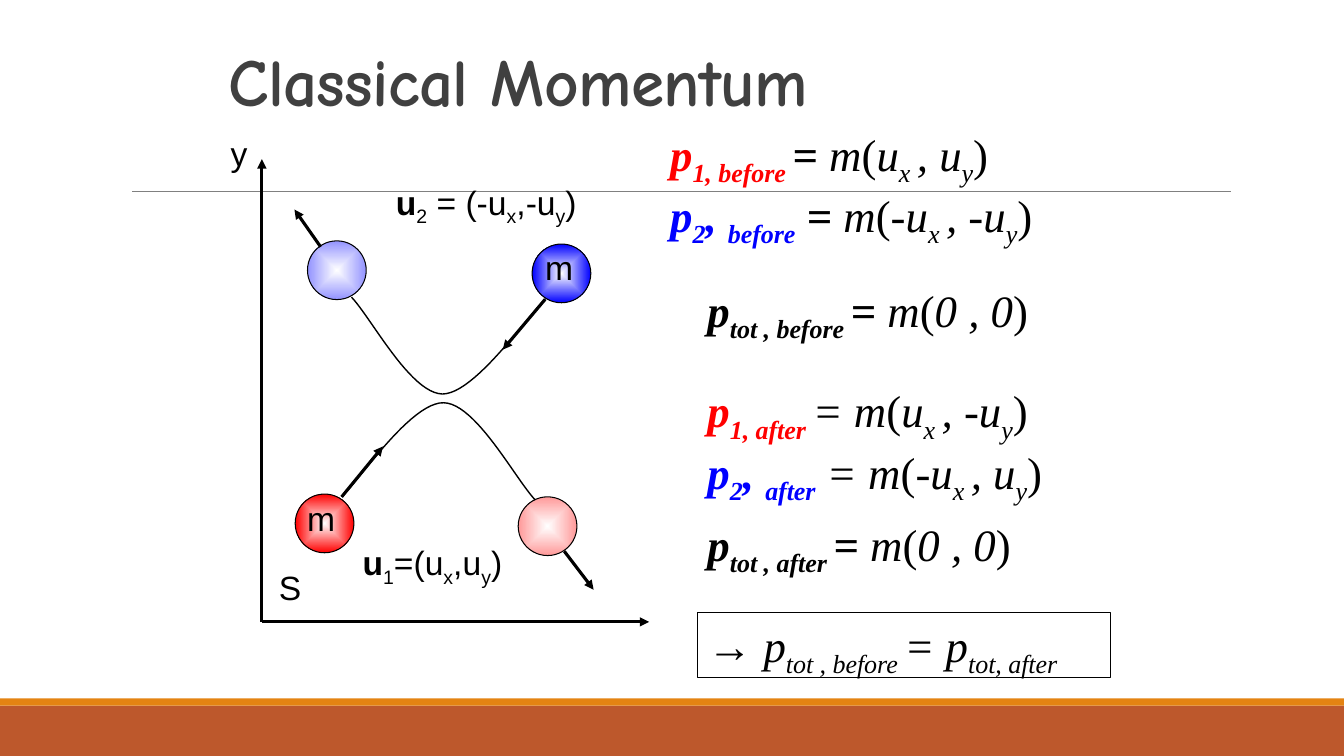
from dataclasses import dataclass

from lxml import etree
from pptx import Presentation
from pptx.dml.color import RGBColor
from pptx.enum.shapes import MSO_CONNECTOR, MSO_SHAPE
from pptx.enum.text import MSO_ANCHOR, MSO_AUTO_SIZE, PP_ALIGN
from pptx.oxml.ns import qn
from pptx.util import Cm, Pt

RECTANGLE, OVAL = MSO_SHAPE.RECTANGLE, MSO_SHAPE.OVAL
STRAIGHT = MSO_CONNECTOR.STRAIGHT
TOP, BOTTOM = MSO_ANCHOR.TOP, MSO_ANCHOR.BOTTOM
LEFT = PP_ALIGN.LEFT
GROW, NO_FIT = MSO_AUTO_SIZE.SHAPE_TO_FIT_TEXT, MSO_AUTO_SIZE.NONE

BLACK = RGBColor(0, 0, 0)
WHITE = RGBColor(0xFF, 0xFF, 0xFF)
RED = RGBColor(0xFF, 0, 0)
PINK = RGBColor(0xFF, 0x99, 0x99)
BLUE = RGBColor(0, 0, 0xFF)
PALE_BLUE = RGBColor(0x93, 0x93, 0xFF)
GRAY = RGBColor(0x80, 0x80, 0x80)
TITLE_GRAY = RGBColor(0x40, 0x40, 0x40)
RUST = RGBColor(0xBD, 0x58, 0x2C)
ORANGE = RGBColor(0xE4, 0x83, 0x12)

BALL_SIZE = 1.48
CURVE_STEPS = 24
LABEL = {"name": "Arial", "size": Pt(24)}
FORMULA = {"name": "Times New Roman", "size": Pt(32)}
Point = tuple[float, float]


@dataclass
class Span:
    text: str
    bold: bool = False
    italic: bool = False
    sub: bool = False
    color: RGBColor = BLACK


@dataclass
class Ball:
    left: float
    top: float
    color: RGBColor


@dataclass
class Arrow:
    start: Point
    end: Point


@dataclass
class Note:
    left: float
    top: float
    width: float
    height: float
    font: dict
    lines: list[list[Span]]
    framed: bool = False


def velocity(index: str, equals: str, minus: str) -> list[Span]:
    return [Span("u", bold=True), Span(index, sub=True), Span(f"{equals}({minus}u"),
            Span("x", sub=True), Span(f",{minus}u"), Span("y", sub=True), Span(")")]


def product(x: str, y: str) -> list[Span]:
    """The part m(x , y) with subscripts on both components."""
    return [Span("m", italic=True), Span("("), Span(x, italic=True),
            Span("x ", italic=True, sub=True), Span(f", {y}", italic=True),
            Span("y", italic=True, sub=True), Span(")")]


def momenta(when: str, bold: bool, y1: str, y2: str) -> list[list[Span]]:
    """Momentum of both particles, one line each."""
    first = [Span("p", True, True, color=RED), Span(f"1, {when} ", True, True, True, RED),
             Span("= ", bold, True)]
    second = [Span("p", True, True, color=BLUE), Span("2", True, True, True, BLUE),
              Span(", ", True, True, color=BLUE), Span(when, True, True, True, BLUE),
              Span(" = ", bold, True)]
    return [first + product("u", y1), second + product("-u", y2)]


def total(when: str) -> list[list[Span]]:
    return [[Span("p", True, True), Span(f"tot , {when} ", True, True, True),
             Span("= ", True, True), Span("m", italic=True), Span("("),
             Span("0 , 0", italic=True), Span(")")]]


BALLS = [Ball(7.44, 12.45, RED), Ball(13.06, 12.52, PINK),
         Ball(13.41, 6.15, BLUE), Ball(7.75, 6.07, PALE_BLUE)]
ARROWS = [Arrow((8.61, 12.52), (9.65, 11.25)), Arrow((14.22, 13.89), (14.96, 14.86)),
          Arrow((13.74, 7.54), (12.67, 8.81)), Arrow((8.08, 6.22), (7.42, 5.28)),
          Arrow((6.6, 15.67), (16.36, 15.67)), Arrow((6.6, 15.67), (6.6, 4.01))]
# Each path: a start point, then three control points per Bezier piece
PATHS = [
    [(8.61, 12.52), (9.02, 12.14), (10.36, 10.13), (11.18, 10.15),
     (11.99, 10.16), (13.0, 12.09), (13.49, 12.6)],
    [(13.74, 7.54), (13.31, 7.95), (11.96, 9.93), (11.15, 9.93),
     (10.34, 9.91), (9.35, 8.0), (8.86, 7.49)],
]
NOTES = [
    Note(5.56, 3.23, 0.94, 1.27, LABEL, [[Span("y")]]),
    Note(8.89, 13.54, 4.19, 1.27, LABEL, [velocity("1", "=", "")]),
    Note(9.73, 4.45, 5.23, 1.27, LABEL, [velocity("2", " = ", "-")]),
    Note(7.49, 12.42, 1.22, 1.27, LABEL, [[Span("m")]]),
    Note(13.49, 6.1, 1.22, 1.27, LABEL, [[Span("m")]]),
    Note(6.78, 14.17, 1.09, 1.27, LABEL, [[Span("S")]]),
    Note(16.64, 3.07, 10.16, 3, FORMULA, momenta("before", True, "u", "-u")),
    Note(17.58, 9.53, 9.37, 3, FORMULA, momenta("after", False, "-u", "u")),
    Note(17.58, 6.99, 9.04, 1.63, FORMULA, total("before")),
    Note(17.58, 12.9, 8.53, 1.63, FORMULA, total("after")),
    Note(17.58, 15.44, 10.41, 1.63, FORMULA, [[
        Span("→ "), Span("p", italic=True), Span("tot , before ", italic=True, sub=True),
        Span("= p", italic=True), Span("tot, after", italic=True, sub=True)]], framed=True),
]


def apply(target, values: dict) -> None:
    for name, value in values.items():
        setattr(target, name, value)


def outline(shape, color: RGBColor, width: float) -> None:
    shape.line.color.rgb = color
    shape.line.width = Pt(width)


def add_bar(page, top: float, height: float, color: RGBColor) -> None:
    bar = page.shapes.add_shape(RECTANGLE, 0, Cm(top), Cm(33.87), Cm(height))
    bar.shadow.inherit = False
    bar.fill.solid()
    bar.fill.fore_color.rgb = color
    bar.line.fill.background()


def add_line(page, start: Point, end: Point, color: RGBColor, width: float,
             arrowhead: bool = False) -> None:
    line = page.shapes.add_connector(STRAIGHT, *(Cm(value) for value in start + end))
    outline(line, color, width)
    properties = line.element.spPr
    if arrowhead:
        etree.SubElement(properties.find(qn("a:ln")), qn("a:tailEnd"), type="triangle")
    etree.SubElement(properties, qn("a:effectLst"))


def add_ball(page, ball: Ball) -> None:
    shape = page.shapes.add_shape(OVAL, Cm(ball.left), Cm(ball.top), Cm(BALL_SIZE), Cm(BALL_SIZE))
    shape.shadow.inherit = False
    outline(shape, BLACK, 0.75)
    shape.fill.gradient()
    for stop, color in zip(shape.fill.gradient_stops, (WHITE, ball.color)):
        stop.color.rgb = color
    # Radiate from the centre
    gradient = shape.element.spPr.find(qn("a:gradFill"))
    gradient.remove(gradient.find(qn("a:lin")))
    radial = etree.SubElement(gradient, qn("a:path"), path="shape")
    etree.SubElement(radial, qn("a:fillToRect"), dict.fromkeys("ltrb", "50000"))


def add_curve(page, points: list[Point]) -> None:
    vertices = []
    for first in range(0, len(points) - 1, 3):
        controls = points[first:first + 4]
        for step in range(1, CURVE_STEPS + 1):
            t = step / CURVE_STEPS
            weights = ((1 - t) ** 3, 3 * t * (1 - t) ** 2, 3 * t ** 2 * (1 - t), t ** 3)
            vertices.append(tuple(Cm(sum(w * point[axis] for w, point in zip(weights, controls)))
                                  for axis in (0, 1)))
    builder = page.shapes.build_freeform(Cm(points[0][0]), Cm(points[0][1]))
    builder.add_line_segments(vertices, close=False)
    curve = builder.convert_to_shape()
    curve.shadow.inherit = False
    curve.fill.background()
    outline(curve, BLACK, 1)


def add_note(page, note: Note) -> None:
    place = [Cm(value) for value in (note.left, note.top, note.width, note.height)]
    if note.framed:
        box = page.shapes.add_shape(RECTANGLE, *place)
        box.shadow.inherit = False
        box.fill.background()
        outline(box, BLACK, 0.75)
    else:
        box = page.shapes.add_textbox(*place)
    frame = box.text_frame
    apply(frame, {"word_wrap": False, "auto_size": GROW, "vertical_anchor": TOP})
    for number, line in enumerate(note.lines):
        para = frame.add_paragraph() if number else frame.paragraphs[0]
        para.alignment = LEFT
        for span in line:
            run = para.add_run()
            run.text = span.text
            apply(run.font, note.font | {"bold": span.bold, "italic": span.italic})
            run.font.color.rgb = span.color
            if span.sub:
                run.font._element.set("baseline", "-25000")


def add_title(page, text: str) -> None:
    title = page.shapes.title
    apply(title, {"left": Cm(5.51), "top": Cm(-0.03), "width": Cm(22.86), "height": Cm(3.18)})
    apply(title.text_frame, {"vertical_anchor": BOTTOM, "auto_size": NO_FIT, "word_wrap": True})
    para = title.text_frame.paragraphs[0]
    apply(para, {"alignment": LEFT, "line_spacing": 0.85})
    run = para.add_run()
    run.text = text
    apply(run.font, {"name": "Comic Neue", "size": Pt(48), "bold": True})
    run.font.color.rgb = TITLE_GRAY
    run.font._element.set("spc", "-50")


def main() -> None:
    deck = Presentation()
    deck.slide_width, deck.slide_height = Cm(33.87), Cm(19.05)
    page = deck.slides.add_slide(deck.slide_layouts[5])
    # Page furniture
    add_bar(page, 17.78, 1.27, RUST)
    add_bar(page, 17.6, 0.18, ORANGE)
    add_line(page, (3.33, 4.83), (31.01, 4.83), GRAY, 0.5)
    add_title(page, "Classical Momentum")
    # Collision diagram
    for ball in BALLS:
        add_ball(page, ball)
    for points in PATHS:
        add_curve(page, points)
    for arrow in ARROWS:
        add_line(page, arrow.start, arrow.end, BLACK, 2.25, arrowhead=True)
    # Labels and formulas
    for note in NOTES:
        add_note(page, note)
    deck.save("out.pptx")


if __name__ == "__main__":
    main()
